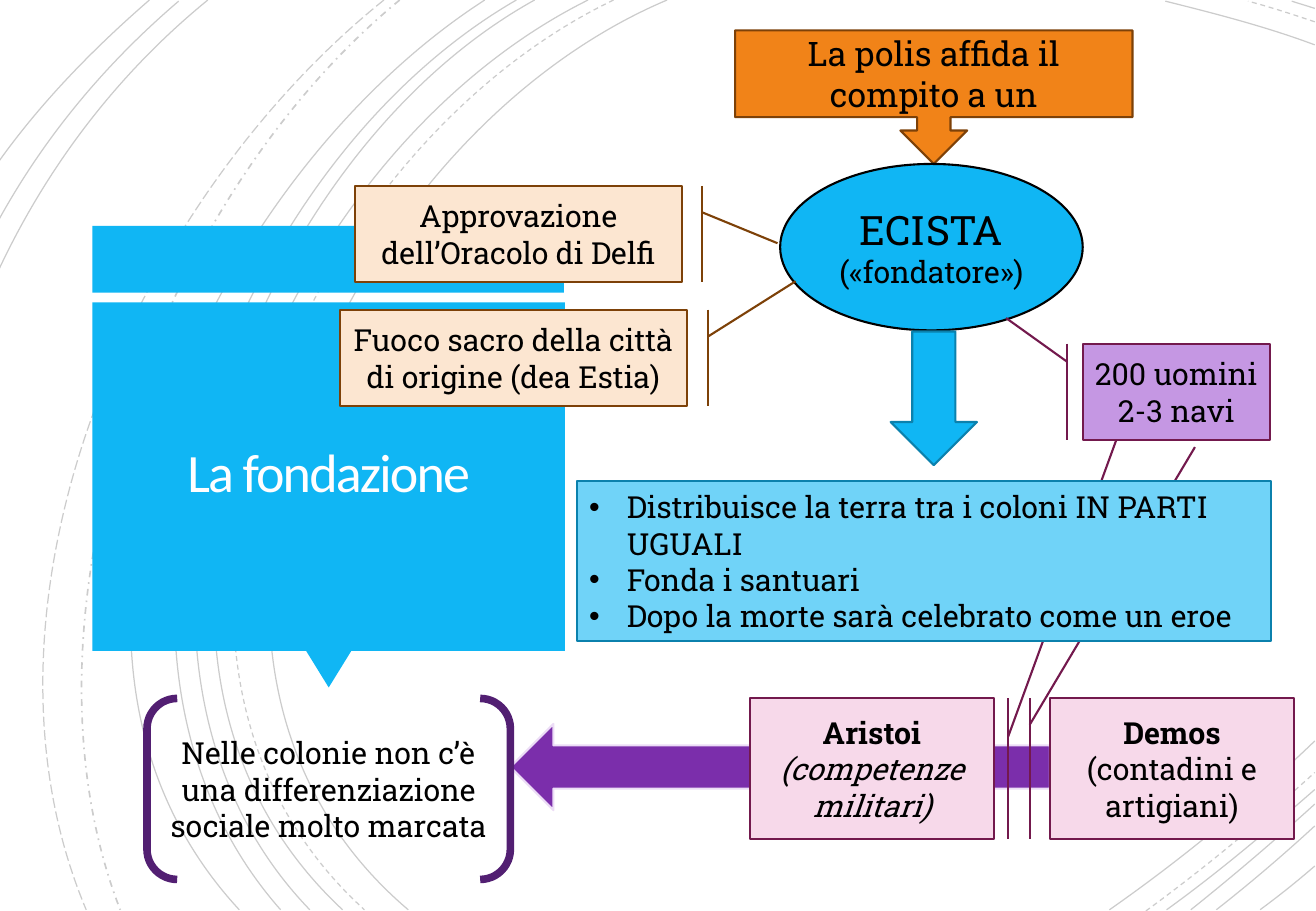
"""Builds the slide on how a Greek colony was founded."""
from dataclasses import dataclass

from lxml import etree
from pptx import Presentation
from pptx.dml.color import RGBColor
from pptx.enum.dml import MSO_LINE
from pptx.enum.shapes import MSO_SHAPE
from pptx.enum.text import MSO_ANCHOR, PP_ALIGN
from pptx.oxml.ns import qn
from pptx.util import Pt

PX = 9144
RECT = MSO_SHAPE.RECTANGLE
OVAL = MSO_SHAPE.OVAL
WEDGE = MSO_SHAPE.ISOSCELES_TRIANGLE
LEFT_ARROW = MSO_SHAPE.LEFT_ARROW
DOWN_ARROW = MSO_SHAPE.DOWN_ARROW
DOWN_NOTE = MSO_SHAPE.DOWN_ARROW_CALLOUT
CALLOUT = MSO_SHAPE.LINE_CALLOUT_1_BORDER_AND_ACCENT_BAR
BRACKETS = MSO_SHAPE.DOUBLE_BRACKET
SOLID = MSO_LINE.SOLID
DASH = MSO_LINE.DASH
DASH_DOT = MSO_LINE.DASH_DOT
LONG_DASH = MSO_LINE.LONG_DASH
CENTER = PP_ALIGN.CENTER
LEFT = PP_ALIGN.LEFT
MIDDLE = MSO_ANCHOR.MIDDLE


@dataclass(frozen=True)
class Theme:
    ink: str = "000000"
    white: str = "FFFEFF"
    blue: str = "10B6F4"
    navy: str = "0B81AD"
    sky: str = "70D3F8"
    orange: str = "F18318"
    brown: str = "7D4108"
    peach: str = "FCE6D1"
    violet: str = "7B2EAB"
    mist: str = "ECDCF6"
    lilac: str = "C597E3"
    wine: str = "73194D"
    rose: str = "F7D9EA"
    plum: str = "521F72"
    body: str = "Roboto Slab"
    head: str = "Calibri"
    small: int = 18
    medium: int = 20
    large: int = 24
    title: int = 32
    edge: float = 1.25
    hair: float = 0.75
    thick: float = 4.5


THEME = Theme()

ARCS = (
    ((549, 0), (277, 115), (90, 540), (336, 749), SOLID),
    ((1082, 37), (1042, 22), (999, 11), (959, 1), SOLID),
    ((913, 749), (973, 707), (1030, 660), (1082, 610), SOLID),
    ((505, 0), (244, 125), (68, 538), (300, 749), DASH),
    ((1082, 18), (1064, 12), (1046, 6), (1027, 1), DASH),
    ((943, 750), (991, 715), (1038, 676), (1082, 636), DASH),
    ((484, 0), (228, 127), (54, 537), (282, 749), SOLID),
    ((1082, 7), (1076, 5), (1069, 3), (1063, 1), SOLID),
    ((960, 749), (1003, 718), (1043, 684), (1082, 650), SOLID),
    ((440, 0), (200, 133), (54, 541), (255, 749), SOLID),
    ((980, 749), (1015, 721), (1049, 692), (1082, 662), SOLID),
    ((425, 0), (186, 138), (41, 534), (231, 749), SOLID),
    ((1001, 749), (1029, 727), (1056, 704), (1082, 680), SOLID),
    ((399, 0), (171, 147), (-7, 529), (197, 749), SOLID),
    ((1037, 749), (1052, 738), (1067, 726), (1082, 713), SOLID),
    ((329, 0), (127, 166), (6, 509), (99, 749), DASH_DOT),
    ((316, 0), (106, 169), (-34, 499), (71, 749), LONG_DASH),
    ((171, 0), (95, 62), (38, 139), (-1, 222), SOLID),
    ((147, 1), (85, 54), (36, 114), (-1, 181), SOLID),
    ((123, 0), (77, 40), (34, 84), (-1, 133), SOLID),
)


def rgb(code):
    return RGBColor.from_string(code)


def arc(slide, start, *rest):
    """Draw one faint open cubic curve."""
    *ends, dash = rest
    pen = slide.shapes.build_freeform(*start, scale=PX)
    pen.add_line_segments(ends, close=False)
    shape = pen.convert_to_shape()
    shape.shadow.inherit = False
    shape.fill.background()
    line = shape.line
    line.color.rgb = rgb(THEME.ink)
    line.width = Pt(1 if dash == DASH_DOT else THEME.hair)
    line.dash_style = dash
    props = shape._element.spPr
    tint = props.find(qn("a:ln")).find(".//" + qn("a:srgbClr"))
    etree.SubElement(tint, qn("a:alpha")).set("val", "20000")
    track = props.find(".//" + qn("a:path"))
    curve = etree.SubElement(track, qn("a:cubicBezTo"))
    for leg in track.findall(qn("a:lnTo")):
        curve.append(leg[0])
        track.remove(leg)


def block(slide, kind, box, fill=None, line=None, width=THEME.edge, adj=()):
    """Add a preset shape with its fill and outline."""
    shape = slide.shapes.add_shape(kind, *(v * PX for v in box))
    shape.shadow.inherit = False
    for i, value in enumerate(adj):
        shape.adjustments[i] = value
    if fill:
        shape.fill.solid()
        shape.fill.fore_color.rgb = rgb(fill)
    else:
        shape.fill.background()
    if line:
        shape.line.color.rgb = rgb(line)
        shape.line.width = Pt(width)
    else:
        shape.line.fill.background()
    return shape


def style(run, size, name=THEME.body, color=THEME.ink):
    run.font.size = Pt(size)
    run.font.name = name
    run.font.color.rgb = rgb(color)


def write(shape, text, size=THEME.small, align=CENTER):
    """Fill a shape with text and return its paragraphs."""
    frame = shape.text_frame
    frame.text = text
    frame.word_wrap = True
    frame.vertical_anchor = MIDDLE
    for para in frame.paragraphs:
        para.alignment = align
        for run in para.runs:
            style(run, size)
    return frame.paragraphs


def group(slide, box, adj, name, note, slant=None):
    """Add a social group: a bold name and a plain or slanted note."""
    shape = block(slide, CALLOUT, box, THEME.rose, THEME.wine, adj=adj)
    para = write(shape, name)[0]
    para.runs[0].font.bold = True
    run = para.add_run()
    run.text = note
    style(run, THEME.small)
    run.font.bold = False
    run.font.italic = slant


def bullet(para):
    """Give a paragraph a hanging bullet."""
    props = para._p.get_or_add_pPr()
    props.set("marL", str(31 * PX))
    props.set("indent", str(-31 * PX))
    etree.SubElement(props, qn("a:buFont")).set("typeface", "Arial")
    etree.SubElement(props, qn("a:buChar")).set("char", "•")


def title(slide, box, text):
    """Add the white slide title."""
    shape = slide.shapes.add_textbox(*(v * PX for v in box))
    para = write(shape, text)[0]
    para.line_spacing = 0.85
    run = para.runs[0]
    style(run, THEME.title, THEME.head, THEME.white)
    run._r.get_or_add_rPr().set("spc", "-110")
    frame = shape.text_frame
    frame.margin_left = frame.margin_right = 25 * PX
    frame.margin_top = frame.margin_bottom = 25 * PX


def main():
    deck = Presentation()
    deck.slide_width, deck.slide_height = 1083 * PX, 750 * PX
    slide = deck.slides.add_slide(deck.slide_layouts[6])
    for row in ARCS:
        arc(slide, *row)

    block(slide, RECT, (76, 186, 388, 55), THEME.blue)
    block(slide, WEDGE, (252, 536, 37, 30), THEME.blue).rotation = 180
    block(slide, RECT, (76, 249, 389, 287), THEME.blue)
    block(slide, LEFT_ARROW, (420, 596, 444, 71), THEME.violet, THEME.mist)
    title(slide, (86, 257, 369, 270), "La fondazione")

    task = block(slide, DOWN_NOTE, (605, 25, 327, 110), THEME.orange, THEME.brown)
    write(task, "La polis affida il compito a un", THEME.medium)
    chief = block(slide, OVAL, (642, 135, 249, 137), THEME.blue, THEME.ink)
    lines = write(chief, "ECISTA\n(«fondatore»)")
    lines[0].runs[0].font.size = Pt(THEME.large)

    for box, adj, fill, line, text in (
        ((891, 283, 154, 79), (0.188, -0.083, -0.268, -0.409),
         THEME.lilac, THEME.wine, "200 uomini\n2-3 navi"),
        ((292, 153, 269, 79), (0.277, 1.063, 0.598, 1.293),
         THEME.peach, THEME.brown, "Approvazione dell’Oracolo di Delfi"),
        ((280, 255, 285, 79), (0.277, 1.063, -0.297, 1.315),
         THEME.peach, THEME.brown,
         "Fuoco sacro della città di origine (dea Estia)"),
    ):
        write(block(slide, CALLOUT, box, fill, line, adj=adj), text)

    block(slide, DOWN_ARROW, (733, 273, 71, 110), THEME.blue, THEME.navy)
    group(slide, (864, 575, 201, 116), (0.188, -0.083, -1.784, 0.594),
          "Demos", " (contadini e artigiani)")
    group(slide, (617, 575, 201, 116), (0.272, 1.058, -1.835, 1.501),
          "Aristoi ", "(competenze militari)", True)

    duties = block(slide, RECT, (475, 396, 571, 132), THEME.sky, THEME.navy)
    for para in write(duties, "Distribuisce la terra tra i coloni IN PARTI UGUALI\n"
                      "Fonda i santuari\n"
                      "Dopo la morte sarà celebrato come un eroe", align=LEFT):
        bullet(para)
    result = block(slide, BRACKETS, (121, 575, 299, 149), None, THEME.plum, THEME.thick)
    write(result, "Nelle colonie non c’è una differenziazione sociale molto marcata")
    deck.save("out.pptx")


if __name__ == "__main__":
    main()
